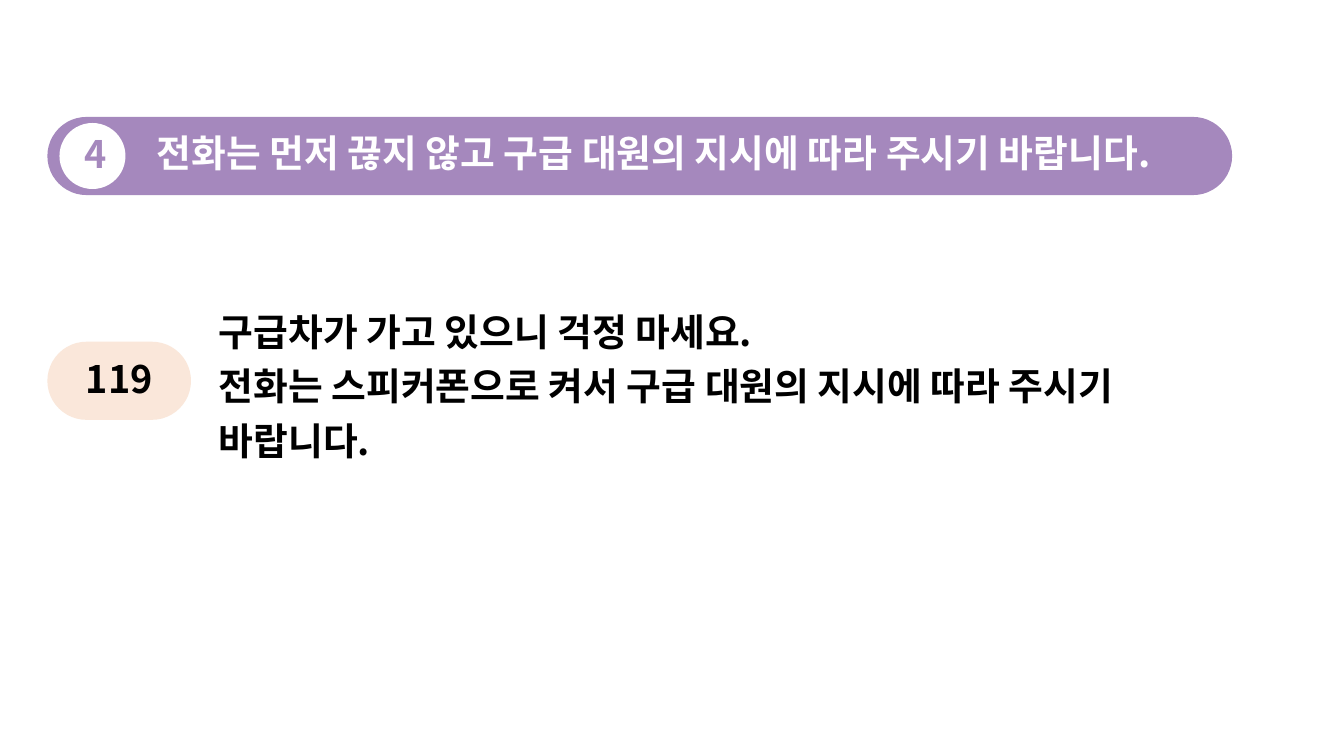
from lxml import etree
from pptx import Presentation
from pptx.dml.color import RGBColor
from pptx.enum.shapes import MSO_SHAPE
from pptx.enum.text import MSO_ANCHOR, MSO_AUTO_SIZE, PP_ALIGN
from pptx.oxml.ns import qn
from pptx.util import Inches, Pt

ROUNDED, OVAL = MSO_SHAPE.ROUNDED_RECTANGLE, MSO_SHAPE.OVAL
MIDDLE, FIT_SHAPE = MSO_ANCHOR.MIDDLE, MSO_AUTO_SIZE.SHAPE_TO_FIT_TEXT
LEFT, CENTER = PP_ALIGN.LEFT, PP_ALIGN.CENTER

FONT = "Noto Sans CJK KR"
PURPLE, PEACH, WHITE, BLACK = "A588BD", "FAE7DA", "FFFFFF", "000000"
PILL_HEIGHT = 1.55
LINE_HEIGHT = 0.93


def color(hex_string):
    return RGBColor.from_string(hex_string)


def add_filled(slide, kind, box, fill):
    shape = slide.shapes.add_shape(kind, *map(Inches, box))
    shape.shadow.inherit = False
    shape.fill.solid()
    shape.fill.fore_color.rgb = color(fill)
    shape.line.fill.background()
    if kind == ROUNDED:
        shape.adjustments[0] = 0.5
    return shape


def write_text(shape, box, lines, text_color, align=LEFT, spacing=0.9):
    """Place a text shape and fill it with one paragraph per line."""
    shape.left, shape.top, shape.width, shape.height = map(Inches, box)
    frame = shape.text_frame
    frame.text = "\n".join(lines)
    frame.word_wrap = True
    frame.auto_size = FIT_SHAPE
    frame.vertical_anchor = MIDDLE
    frame.margin_left = frame.margin_right = Inches(0.06)
    frame.margin_top = frame.margin_bottom = Inches(0.06)
    for paragraph in frame.paragraphs:
        paragraph.alignment = align
        paragraph.line_spacing = spacing
        paragraph.space_before = Pt(0)
        font = paragraph.font
        font.name, font.size, font.bold = FONT, Pt(54), True
        font.color.rgb = color(text_color)
        # Korean glyphs use the East Asian typeface
        etree.SubElement(font._rPr, qn("a:ea"), typeface=FONT)


def add_text(slide, box, lines, text_color, **options):
    text_box = slide.shapes.add_textbox(*map(Inches, box))
    write_text(text_box, box, lines, text_color, **options)


def add_heading(slide, left, top, width, number, text):
    """Purple banner with the slide title and a numbered circle."""
    add_filled(slide, ROUNDED, (left, top, width, PILL_HEIGHT), PURPLE)

    # Bring the title in front of the banner
    title = slide.shapes.title
    slide.shapes._spTree.append(title._element)
    write_text(title, (left + 2.11, top + 0.29, width - 2.5, LINE_HEIGHT),
               [text], WHITE)

    # Number circle
    add_filled(slide, OVAL, (left + 0.24, top + 0.12, 1.31, 1.31), WHITE)
    add_text(slide, (left + 0.68, top + 0.31, 0.44, LINE_HEIGHT),
             [number], PURPLE, align=CENTER)


def add_dialogue(slide, left, top, width, height, speaker, lines):
    """Speaker pill on the left, spoken lines on the right."""
    pill_width, pill_top = 2.85, top + 0.91
    add_filled(slide, ROUNDED, (left, pill_top, pill_width, PILL_HEIGHT), PEACH)
    add_text(slide, (left + 0.6, pill_top + 0.31, 1.66, LINE_HEIGHT),
             [speaker], BLACK, align=CENTER)

    text_offset = pill_width + 0.49
    add_text(slide, (left + text_offset, top, width - text_offset, height),
             lines, BLACK, spacing=1.2)


def main():
    presentation = Presentation()
    presentation.slide_width = Inches(26.67)
    presentation.slide_height = Inches(15)
    slide = presentation.slides.add_slide(presentation.slide_layouts[5])
    slide.background.fill.solid()
    slide.background.fill.fore_color.rgb = color(WHITE)

    add_heading(slide, 0.94, 2.32, 23.51, "4",
                "전화는 먼저 끊지 않고 구급 대원의 지시에 따라 주시기 바랍니다.")
    add_dialogue(slide, 0.94, 5.87, 22.93, 3.38, "119", [
        "구급차가 가고 있으니 걱정 마세요.",
        "전화는 스피커폰으로 켜서 구급 대원의 지시에 따라 주시기 바랍니다.",
    ])
    presentation.save("out.pptx")


if __name__ == "__main__":
    main()
